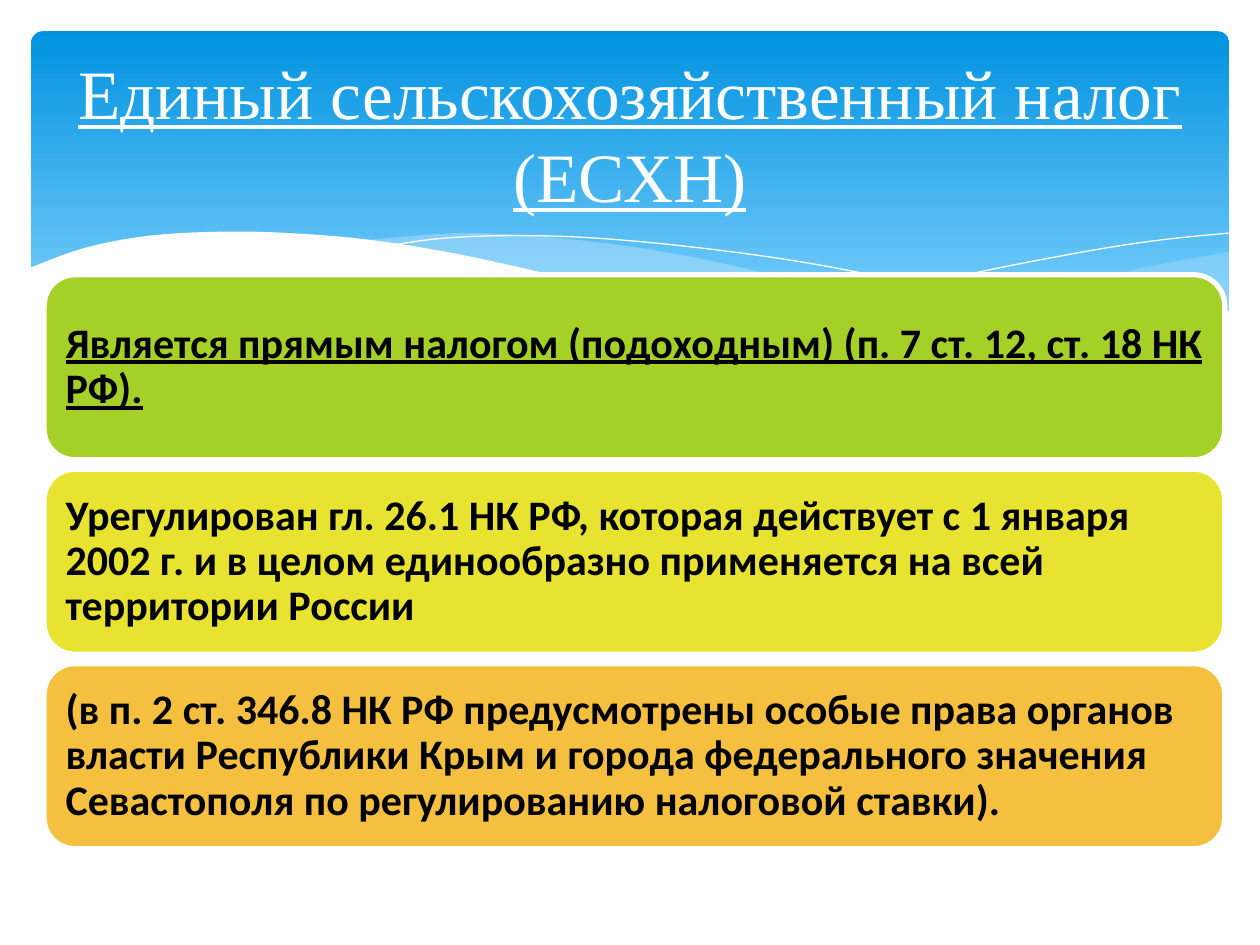
from dataclasses import dataclass
from typing import Optional

from lxml.etree import SubElement
from pptx import Presentation
from pptx.dml.color import RGBColor
from pptx.enum.shapes import MSO_SHAPE
from pptx.enum.text import MSO_ANCHOR, MSO_AUTO_SIZE, PP_ALIGN
from pptx.oxml.ns import qn
from pptx.util import Cm, Pt

Point = tuple[float, float]

WHITE = "FFFFFF"
BLACK = "000000"
CARD_LEFT, CARD_TOP = 0.89, 5.54
CARD_WIDTH, CARD_HEIGHT, CARD_PITCH = 23.8, 3.73, 3.92


@dataclass(frozen=True)
class Wave:
    """Edges are smooth curves through their points; a wave without fill is a line."""
    edges: tuple[tuple[Point, ...], ...]
    fill: Optional[str] = None
    opacity: int = 100


@dataclass(frozen=True)
class Card:
    text: str
    fill: str
    underline: bool = False


WAVES = (
    Wave((
        ((24.79, 5.08), (23.39, 5.33), (21.87, 5.66), (19.79, 6.15), (16.79, 6.73)),
        ((16.79, 6.73), (17.91, 6.88), (19.23, 7.01), (20.68, 7.06), (21.92, 6.99),
         (23.19, 6.78), (24.1, 6.53), (24.79, 6.27)),
    ), "C6E7FC", 29),
    Wave((
        ((22.68, 6.93), (20.5, 6.6), (17.93, 6.1), (15.98, 5.64), (14.1, 5.21),
         (12.42, 4.93), (10.67, 4.75), (9.17, 4.7), (7.26, 4.85)),
        ((7.26, 4.85), (9.19, 5.16), (11.4, 5.64), (14.38, 6.3), (16.51, 6.71),
         (18.34, 6.96), (19.94, 7.06), (21.29, 7.06), (22.68, 6.93)),
    ), "C6E7FC", 40),
    Wave((
        ((7.85, 4.95), (8.97, 4.8), (10.57, 4.75), (12.42, 4.83), (14.78, 5.08),
         (16.89, 5.41), (19.3, 5.92), (21.11, 6.38), (23.04, 6.91)),
    )),
    Wave((
        ((15.57, 6.53), (17.65, 5.97), (19.71, 5.49), (22, 5.05), (23.47, 4.83),
         (24.77, 4.7)),
    )),
    Wave((
        ((24.82, 6.25), (23.37, 6.73), (22.23, 6.93), (20.55, 7.04), (18.9, 6.96),
         (16.46, 6.65), (14.1, 6.22), (11.35, 5.59), (9.27, 5.13), (7.42, 4.83),
         (5.84, 4.7), (4.5, 4.67), (3.02, 4.75), (1.7, 5), (0.58, 5.41)),
        ((0.58, 8.36), (24.82, 8.36)),
    ), WHITE),
)

CARDS = (
    Card("Является прямым налогом (подоходным) (п. 7 ст. 12, ст. 18 НК РФ).",
         "A5D028", underline=True),
    Card("Урегулирован гл. 26.1 НК РФ, которая действует с 1 января 2002 г. и в целом "
         "единообразно применяется на всей территории России", "E7E330"),
    Card("(в п. 2 ст. 346.8 НК РФ предусмотрены особые права органов власти Республики "
         "Крым и города федерального значения Севастополя по регулированию налоговой "
         "ставки).", "F5C040"),
)


def rgb(color: str) -> RGBColor:
    return RGBColor.from_string(color)


def smooth(points: tuple[Point, ...], steps: int = 5) -> list[Point]:
    """Sample a Catmull-Rom curve that passes through the points."""
    padded = (points[0], *points, points[-1])
    curve = [points[0]]
    for a, b, c, d in zip(padded, padded[1:], padded[2:], padded[3:]):
        for step in range(1, steps + 1):
            t = step / steps
            curve.append(tuple(
                0.5 * (2 * q + (r - p) * t + (2 * p - 5 * q + 4 * r - s) * t ** 2
                       + (3 * q - p - 3 * r + s) * t ** 3)
                for p, q, r, s in zip(a, b, c, d)))
    return curve


def format_run(run, font_name: str, size: float, color: str,
               bold: bool = False, underline: bool = False) -> None:
    font = run.font
    font.name, font.size = font_name, Pt(size)
    font.bold, font.underline = bold, underline
    font.color.rgb = rgb(color)


def draw_header(slide) -> None:
    header = slide.shapes.add_shape(
        MSO_SHAPE.ROUNDED_RECTANGLE, Cm(0.63), Cm(0.63), Cm(24.15), Cm(6.86))
    header.adjustments[0] = 0.034
    header.shadow.inherit = False
    header.line.fill.background()
    header.fill.gradient()
    header.fill.gradient_angle = 270
    stops = ((0, "0293E0"), (0.9, "83D3FE"))
    for stop, (position, color) in zip(header.fill.gradient_stops, stops):
        stop.position = position
        stop.color.rgb = rgb(color)


def draw_wave(slide, wave: Wave) -> None:
    points = [(Cm(x), Cm(y)) for edge in wave.edges for x, y in smooth(edge)]
    builder = slide.shapes.build_freeform(*points[0])
    builder.add_line_segments(points[1:], close=wave.fill is not None)
    outline = builder.convert_to_shape()
    outline.shadow.inherit = False
    if wave.fill is None:
        outline.fill.background()
        outline.line.color.rgb = rgb(WHITE)
        outline.line.width = Pt(0)
        return
    outline.line.fill.background()
    outline.fill.solid()
    outline.fill.fore_color.rgb = rgb(wave.fill)
    if wave.opacity < 100:
        color = outline.fill._xPr.find(qn("a:solidFill"))[0]
        SubElement(color, qn("a:alpha")).set("val", str(wave.opacity * 1000))


def draw_card(slide, card: Card, top: float) -> None:
    panel = slide.shapes.add_shape(
        MSO_SHAPE.ROUNDED_RECTANGLE,
        Cm(CARD_LEFT), Cm(top), Cm(CARD_WIDTH), Cm(CARD_HEIGHT))
    panel.shadow.inherit = False
    panel.fill.solid()
    panel.fill.fore_color.rgb = rgb(card.fill)
    panel.line.color.rgb = rgb(WHITE)
    panel.line.width = Pt(3)

    frame = panel.text_frame
    frame.word_wrap = True
    frame.vertical_anchor = MSO_ANCHOR.MIDDLE
    frame.margin_left = frame.margin_right = Cm(0.25)
    frame.margin_top = frame.margin_bottom = Cm(0.25)
    frame.text = card.text
    paragraph = frame.paragraphs[0]
    paragraph.alignment = PP_ALIGN.LEFT
    paragraph.line_spacing = 0.9
    format_run(paragraph.runs[0], "Calibri", 24, BLACK,
               bold=True, underline=card.underline)


def write_title(slide, text: str) -> None:
    """Fill the title and bring it in front of the header."""
    title = slide.shapes.title
    title.left, title.top = Cm(1.27), Cm(0.94)
    title.width, title.height = Cm(22.86), Cm(3.48)
    frame = title.text_frame
    frame.text = text
    frame.word_wrap = True
    frame.auto_size = MSO_AUTO_SIZE.NONE
    frame.vertical_anchor = MSO_ANCHOR.MIDDLE
    paragraph = frame.paragraphs[0]
    paragraph.alignment = PP_ALIGN.CENTER
    format_run(paragraph.runs[0], "Times New Roman", 39.6, WHITE, underline=True)
    slide.shapes._spTree.append(title._element)


def main() -> None:
    presentation = Presentation()
    presentation.slide_width, presentation.slide_height = Cm(25.4), Cm(19.05)
    slide = presentation.slides.add_slide(presentation.slide_layouts[5])
    draw_header(slide)
    for wave in WAVES:
        draw_wave(slide, wave)
    for index, card in enumerate(CARDS):
        draw_card(slide, card, CARD_TOP + index * CARD_PITCH)
    write_title(slide, "Единый сельскохозяйственный налог (ЕСХН)")
    presentation.save("out.pptx")


if __name__ == "__main__":
    main()
